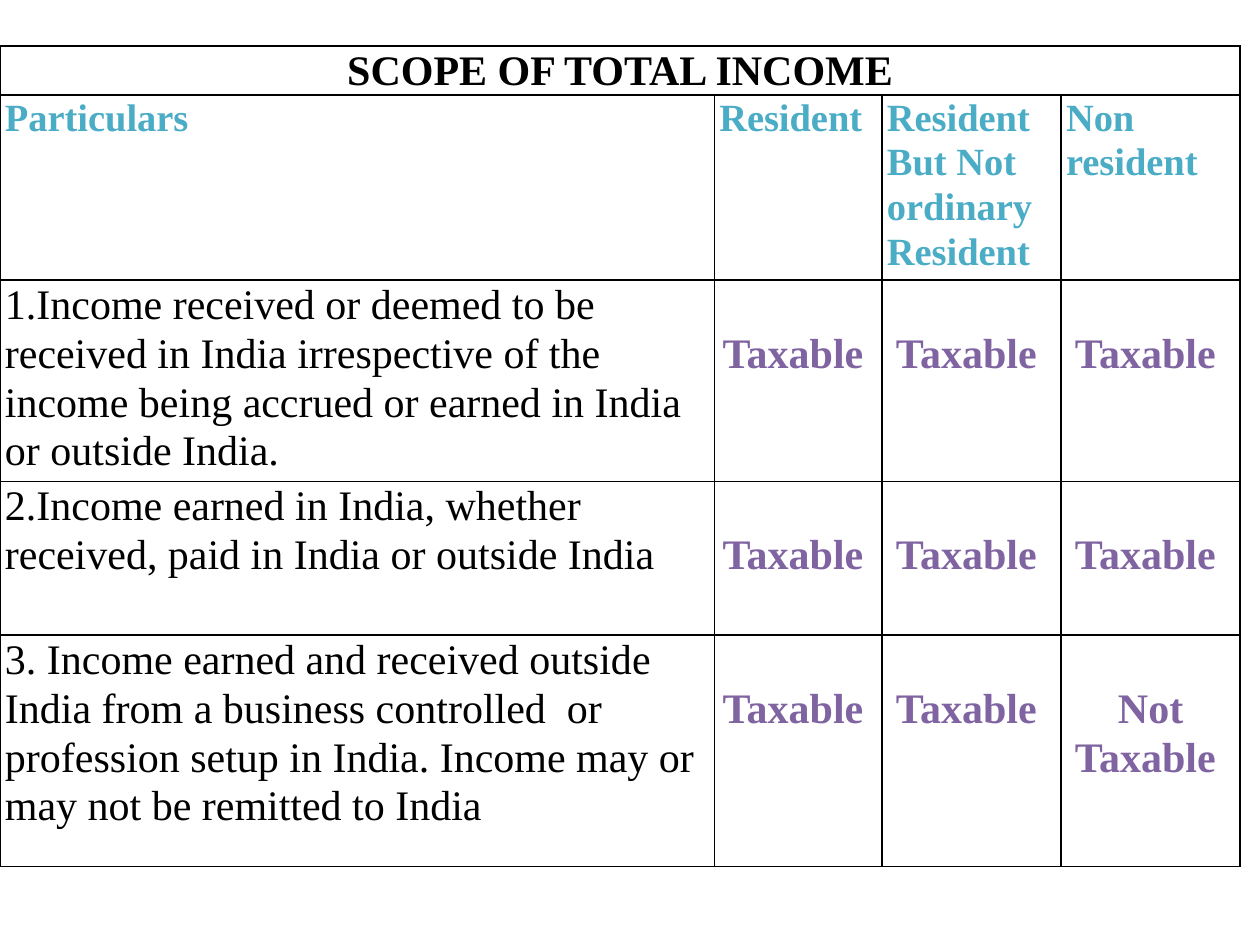
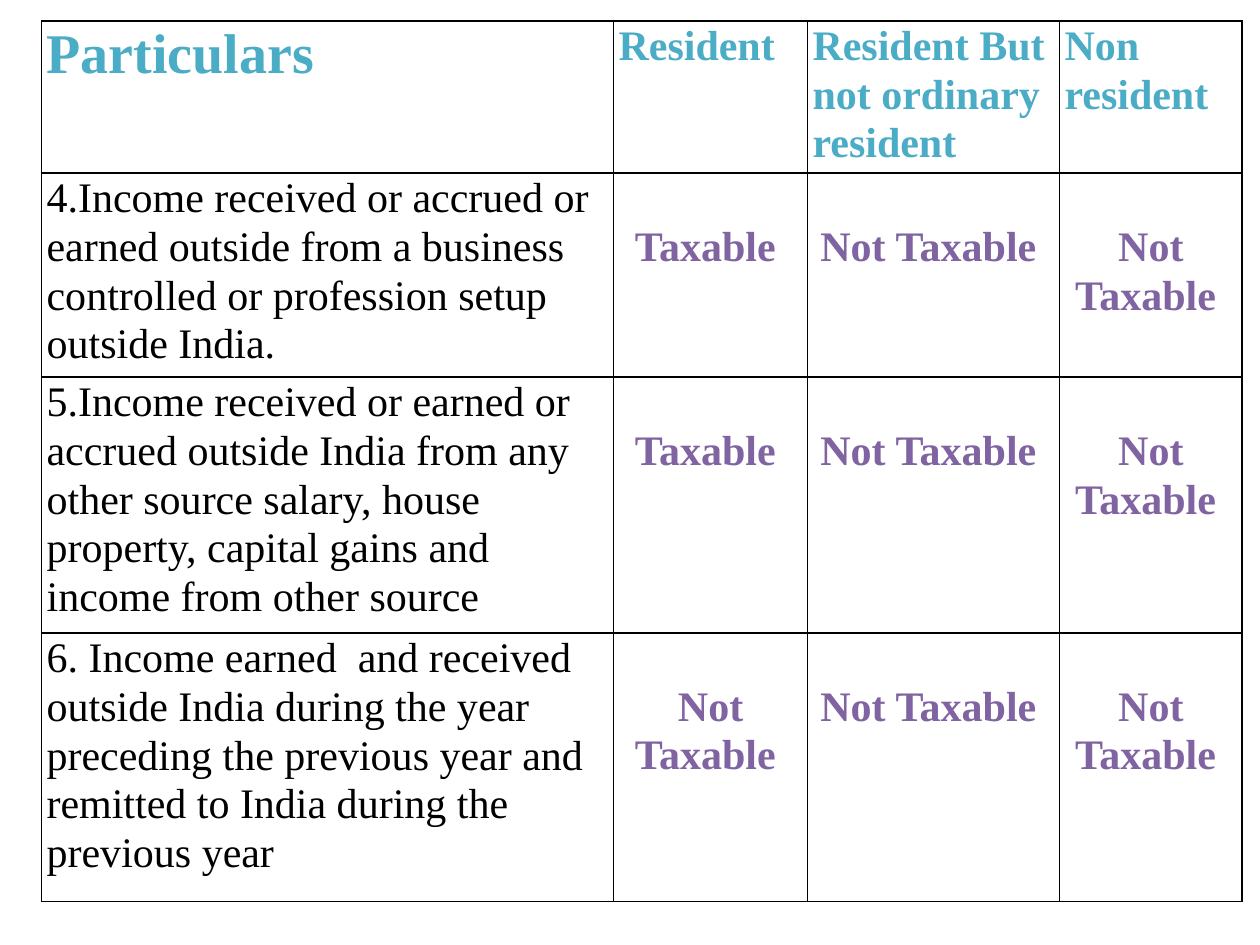
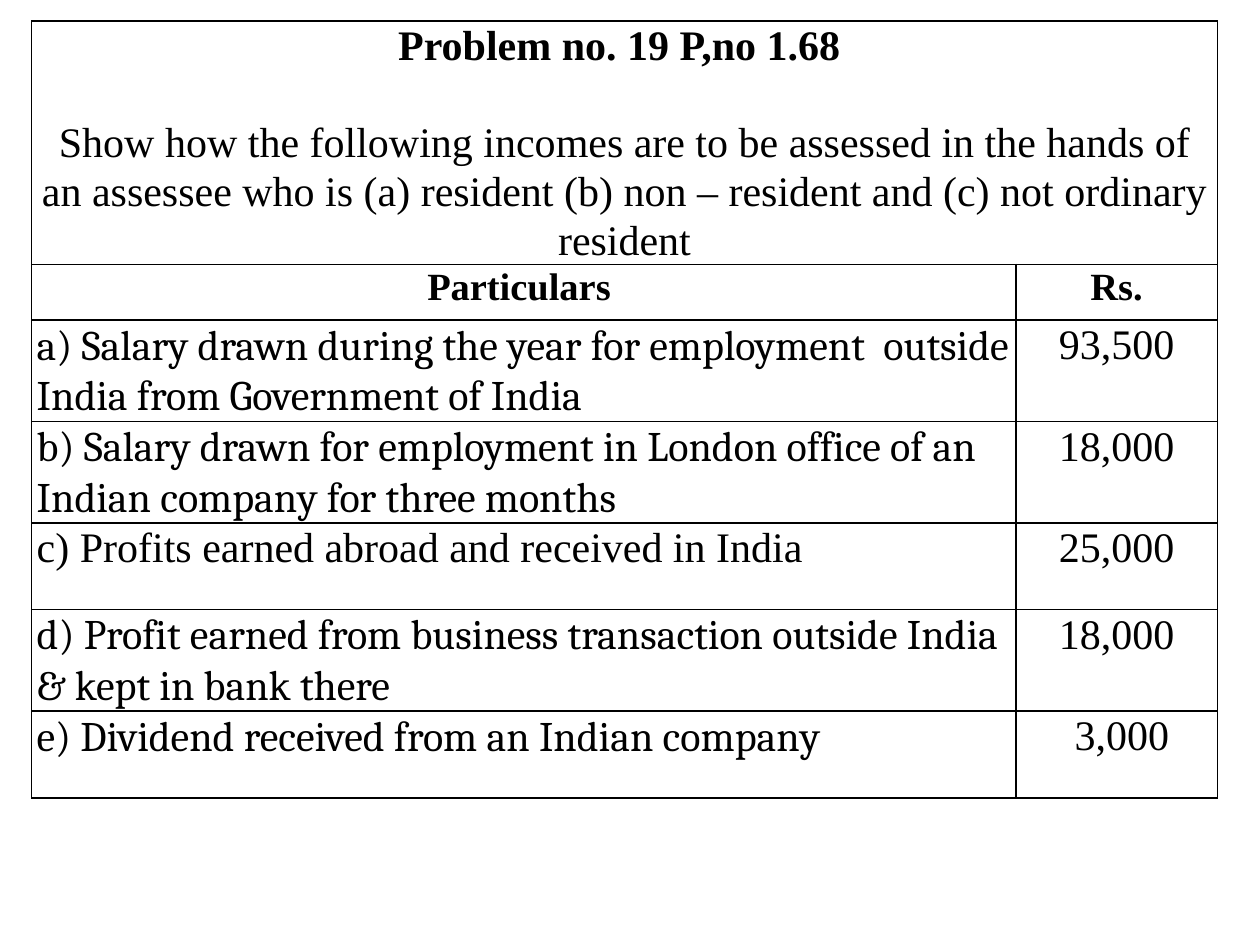
from lxml import etree
from pptx import Presentation
from pptx.dml.color import RGBColor
from pptx.enum.text import PP_ALIGN
from pptx.oxml.ns import qn
from pptx.util import Cm, Pt

BLACK, HEADING, VERDICT = "000000", "4BACC6", "8064A2"
SERIF, BOOK = "Times New Roman", "Cambria"
BLANK_LINE = 0.98  # height of one 24 pt line, in cm


def write_text(paragraph, text, size=24, color=BLACK, bold=False, font=SERIF, align=PP_ALIGN.LEFT):
    paragraph.alignment = align
    paragraph.line_spacing = 1.05
    run = paragraph.add_run()
    run.text = text
    run.font.size = Pt(size)
    run.font.bold = bold
    run.font.name = font
    run.font.color.rgb = RGBColor.from_string(color)


def add_grid(slide, left, top, widths, heights):
    """Add an unfilled table with thin black borders; lengths are in cm."""
    table = slide.shapes.add_table(len(heights), len(widths), Cm(left), Cm(top),
                                   Cm(sum(widths)), Cm(sum(heights))).table
    table.first_row = table.horz_banding = False
    for column, width in zip(table.columns, widths):
        column.width = Cm(width)
    for row, height in zip(table.rows, heights):
        row.height = Cm(height)
    for cell in table.iter_cells():
        cell.margin_left = cell.margin_right = Cm(0.1)
        cell.margin_top = cell.margin_bottom = 0
        properties = cell._tc.get_or_add_tcPr()
        for side in ("a:lnL", "a:lnR", "a:lnT", "a:lnB"):
            line = etree.SubElement(properties, qn(side), w=str(Pt(1)))
            fill = etree.SubElement(line, qn("a:solidFill"))
            etree.SubElement(fill, qn("a:srgbClr"), val=BLACK)
        cell.fill.background()
    return table


presentation = Presentation()
presentation.slide_width, presentation.slide_height = Cm(25.4), Cm(19.05)
blank_layout = presentation.slide_layouts[6]

# Scope of total income: two slides of the same kind of table
YES, NO = "Taxable ", "Not Taxable "
scope_slides = [
    {
        "title": "SCOPE OF TOTAL INCOME",
        "place": (0, 0.93),
        "widths": [14.4, 3.38, 3.61, 3.61],
        "heights": [0.97, 3.73, 4.06, 3.1, 4.67],
        "headings": [("Particulars", 22), ("Resident", 22),
                     ("Resident But Not ordinary Resident", 22), ("Non resident", 22)],
        "incomes": [
            ("1.Income received or deemed to be received in India irrespective of the "
             "income being accrued or earned in India or outside India.", YES, YES, YES),
            ("2.Income earned in India, whether received, paid in India or outside India",
             YES, YES, YES),
            ("3. Income earned and received outside India from a business controlled  or "
             "profession setup in India. Income may or may not be remitted to India",
             YES, YES, NO),
        ],
    },
    {
        "title": None,
        "place": (0.84, 0.42),
        "widths": [11.53, 3.91, 5.08, 3.68],
        "heights": [3.07, 4.11, 5.16, 5.41],
        "headings": [("Particulars", 32), ("Resident", 24),
                     ("Resident But not ordinary resident", 24), ("Non resident", 24)],
        "incomes": [
            ("4.Income received or accrued or earned outside from a business controlled or "
             "profession setup outside India.", YES, NO, NO),
            ("5.Income received or earned or accrued outside India from any other source "
             "salary, house property, capital gains and income from other source",
             YES, NO, NO),
            ("6. Income earned  and received outside India during the year preceding the "
             "previous year and remitted to India during the previous year", NO, NO, NO),
        ],
    },
]

for scope in scope_slides:
    slide = presentation.slides.add_slide(blank_layout)
    table = add_grid(slide, *scope["place"], scope["widths"], scope["heights"])
    heading_row = 0
    if scope["title"]:
        heading_row = 1
        title_cell = table.cell(0, 0)
        title_cell.merge(table.cell(0, 3))
        write_text(title_cell.text_frame.paragraphs[0], scope["title"], bold=True,
                   align=PP_ALIGN.CENTER)

    for column, (heading, size) in enumerate(scope["headings"]):
        write_text(table.cell(heading_row, column).text_frame.paragraphs[0], heading,
                   size=size, color=HEADING, bold=True)

    for row, (income, *verdicts) in enumerate(scope["incomes"], heading_row + 1):
        write_text(table.cell(row, 0).text_frame.paragraphs[0], income)
        for column, verdict in enumerate(verdicts, 1):
            cell = table.cell(row, column)
            cell.margin_top = Cm(BLANK_LINE)
            write_text(cell.text_frame.paragraphs[0], verdict, color=VERDICT, bold=True,
                       align=PP_ALIGN.CENTER)

# Problem: incomes to be assessed
amounts = [
    ("a) Salary drawn during the year for employment  outside India from Government of India",
     BOOK, "93,500"),
    ("b) Salary drawn for employment in London office of an Indian company for three months",
     BOOK, "18,000"),
    ("c) Profits earned abroad and received in India", SERIF, "25,000"),
    ("d) Profit earned from business transaction outside India & kept in bank there",
     BOOK, "18,000"),
    ("e) Dividend received from an Indian company", BOOK, " 3,000"),
]
slide = presentation.slides.add_slide(blank_layout)
table = add_grid(slide, 0.64, 0.42, [19.84, 4.06], [4.78, 1.12, 1.88, 1.88, 1.75, 1.88, 1.75])

problem_cell = table.cell(0, 0)
problem_cell.merge(table.cell(0, 1))
write_text(problem_cell.text_frame.paragraphs[0], "Problem no. 19 P,no 1.68 ", bold=True,
           align=PP_ALIGN.CENTER)
question = problem_cell.text_frame.add_paragraph()
question.space_before = Cm(BLANK_LINE)
write_text(question, "Show how the following incomes are to be assessed in the hands of an "
           "assessee who is (a) resident (b) non – resident and (c) not ordinary resident",
           align=PP_ALIGN.CENTER)

for column, heading in enumerate(["Particulars ", "Rs."]):
    write_text(table.cell(1, column).text_frame.paragraphs[0], heading, size=22, bold=True,
               align=PP_ALIGN.CENTER)

for row, (income, font, amount) in enumerate(amounts, 2):
    write_text(table.cell(row, 0).text_frame.paragraphs[0], income, font=font)
    write_text(table.cell(row, 1).text_frame.paragraphs[0], amount, align=PP_ALIGN.CENTER)

presentation.save("out.pptx")
